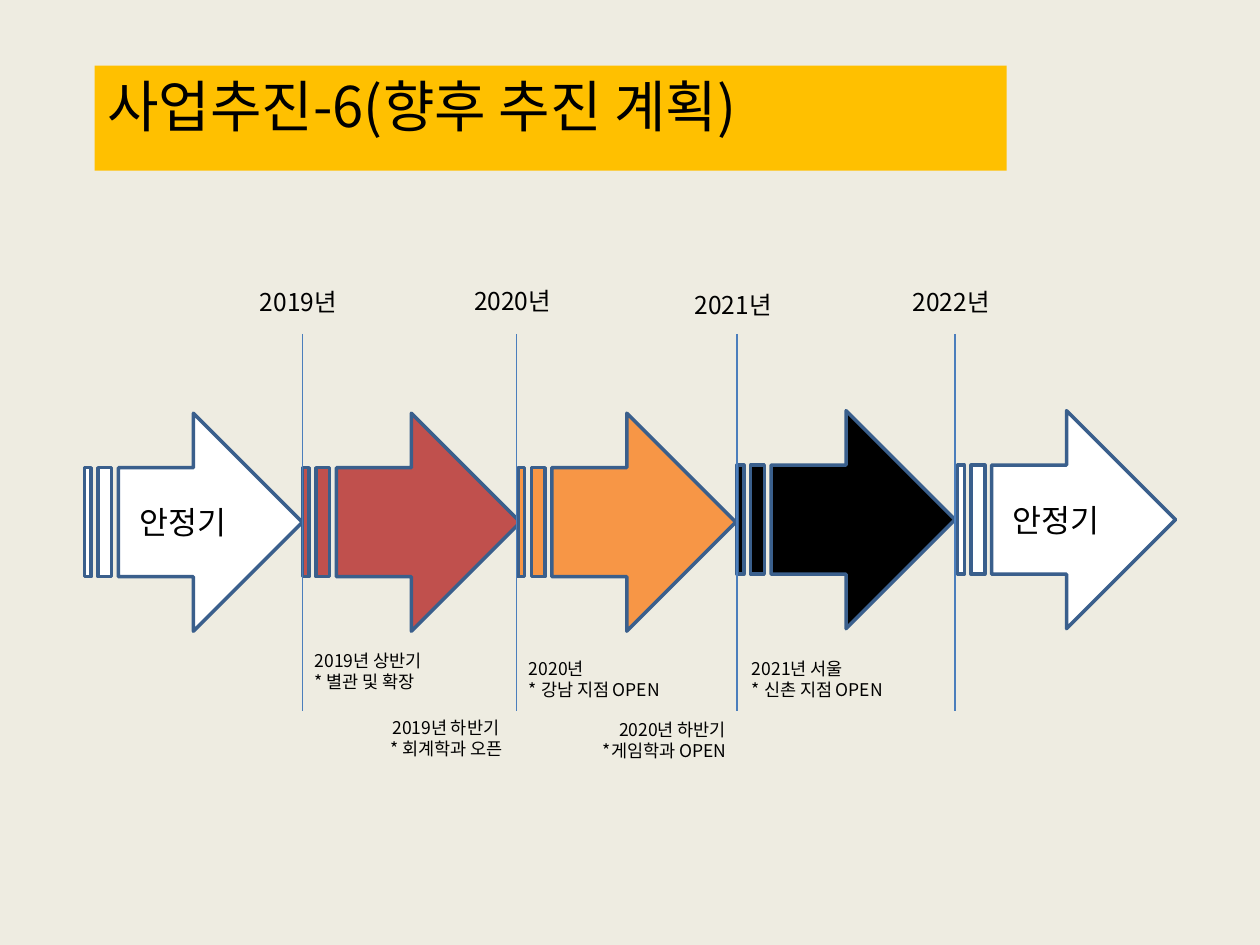
from pptx import Presentation
from pptx.dml.color import RGBColor
from pptx.enum.shapes import MSO_CONNECTOR as Connector, MSO_SHAPE as Shape
from pptx.enum.text import MSO_ANCHOR as Anchor, MSO_AUTO_SIZE as AutoSize, PP_ALIGN as Align
from pptx.oxml.ns import qn
from pptx.util import Inches, Pt
from lxml.etree import SubElement

BACKGROUND = RGBColor(0xEE, 0xEC, 0xE1)
GOLD = RGBColor(0xFF, 0xC0, 0x00)
WHITE = RGBColor(0xFF, 0xFF, 0xFF)
RED = RGBColor(0xC0, 0x50, 0x4D)
ORANGE = RGBColor(0xF7, 0x96, 0x46)
BLACK = RGBColor(0x00, 0x00, 0x00)
OUTLINE = RGBColor(0x3A, 0x5F, 0x8C)
DIVIDER = RGBColor(0x4B, 0x7E, 0xBC)

FONT = "Noto Sans CJK KR"
COLUMNS, ROWS = 100, 75
ARROW_SIZE = 17.3
LINE_TOP, LINE_BOTTOM = 26.5, 56.4
YEAR_WIDTH, YEAR_HEIGHT = 8.7, 3.4
NOTE_WIDTH, NOTE_HEIGHT = 15.7, 4.5

ARROWS = [
    (6.7, 32.8, WHITE, "안정기"),
    (24, 32.8, RED, ""),
    (41.1, 32.8, ORANGE, ""),
    (58.5, 32.6, BLACK, ""),
    (76, 32.6, WHITE, "안정기"),
]
YEARS = [
    ("2019년", 24, 22.3),
    ("2020년", 41, 22.2),
    ("2021년", 58.5, 22.5),
    ("2022년", 75.8, 22.3),
]
NOTES = [
    (24, 51.1, Align.LEFT, "2019년 상반기\n* 별관 및 확장"),
    (25.2, 56.4, Align.RIGHT, "2019년 하반기 \n* 회계학과 오픈"),
    (41, 51.7, Align.LEFT, "2020년\n* 강남 지점 OPEN"),
    (58.7, 51.7, Align.LEFT, "2021년 서울\n* 신촌 지점 OPEN"),
    (42.9, 56.6, Align.RIGHT, "2020년 하반기\n*게임학과 OPEN"),
]


class RoadmapSlide:
    """Hold the style and the slide, placing elements on a 100 by 75 grid."""

    def __init__(self, deck):
        self.cell_width = deck.slide_width / COLUMNS
        self.cell_height = deck.slide_height / ROWS
        self.page = deck.slides.add_slide(deck.slide_layouts[5])
        self.page.background.fill.solid()
        self.page.background.fill.fore_color.rgb = BACKGROUND

    def place(self, column, row):
        return round(column * self.cell_width), round(row * self.cell_height)

    def area(self, column, row, width, height):
        return *self.place(column, row), *self.place(width, height)

    def set_text(self, box, text, size, align=Align.LEFT, anchor=Anchor.TOP):
        frame = box.text_frame
        frame.text = text
        frame.word_wrap = True
        frame.vertical_anchor = anchor
        for para in frame.paragraphs:
            para.alignment = align
            for span in para.runs:
                span.font.name = FONT
                span.font.size = Pt(size)
                span.font.color.rgb = BLACK
                SubElement(span.font._element, qn("a:ea"), typeface=FONT)

    def title(self, text, column, row, width, height):
        box = self.page.shapes.title
        box.left, box.top, box.width, box.height = self.area(column, row, width, height)
        box.fill.solid()
        box.fill.fore_color.rgb = GOLD
        self.set_text(box, text, 32)
        box.text_frame.auto_size = AutoSize.SHAPE_TO_FIT_TEXT

    def arrow(self, column, row, color, text):
        box = self.page.shapes.add_shape(
            Shape.STRIPED_RIGHT_ARROW, *self.area(column, row, ARROW_SIZE, ARROW_SIZE))
        box.shadow.inherit = False
        box.fill.solid()
        box.fill.fore_color.rgb = color
        box.line.color.rgb = OUTLINE
        box.line.width = Pt(2)
        if text:
            self.set_text(box, text, 18, Align.CENTER, Anchor.MIDDLE)

    def divider(self, column):
        line = self.page.shapes.add_connector(
            Connector.STRAIGHT, *self.place(column, LINE_TOP), *self.place(column, LINE_BOTTOM))
        line.line.color.rgb = DIVIDER
        line.line.width = Pt(0.75)
        SubElement(line._element.spPr, qn("a:effectLst"))

    def label(self, text, size, column, row, width, height, align=Align.LEFT):
        box = self.page.shapes.add_textbox(*self.area(column, row, width, height))
        self.set_text(box, text, size, align)
        box.text_frame.auto_size = AutoSize.SHAPE_TO_FIT_TEXT


def main():
    deck = Presentation()
    deck.slide_width, deck.slide_height = Inches(10), Inches(7.5)
    roadmap = RoadmapSlide(deck)
    roadmap.title("사업추진-6(향후 추진 계획)", 7.5, 5.2, 72.4, 6.4)
    for arrow in ARROWS:
        roadmap.arrow(*arrow)
    for year, column, row in YEARS:
        roadmap.divider(column)
        roadmap.label(year, 14, column - YEAR_WIDTH / 2, row, YEAR_WIDTH, YEAR_HEIGHT)
    for column, row, align, text in NOTES:
        roadmap.label(text, 10, column, row, NOTE_WIDTH, NOTE_HEIGHT, align)
    deck.save("out.pptx")


if __name__ == "__main__":
    main()
